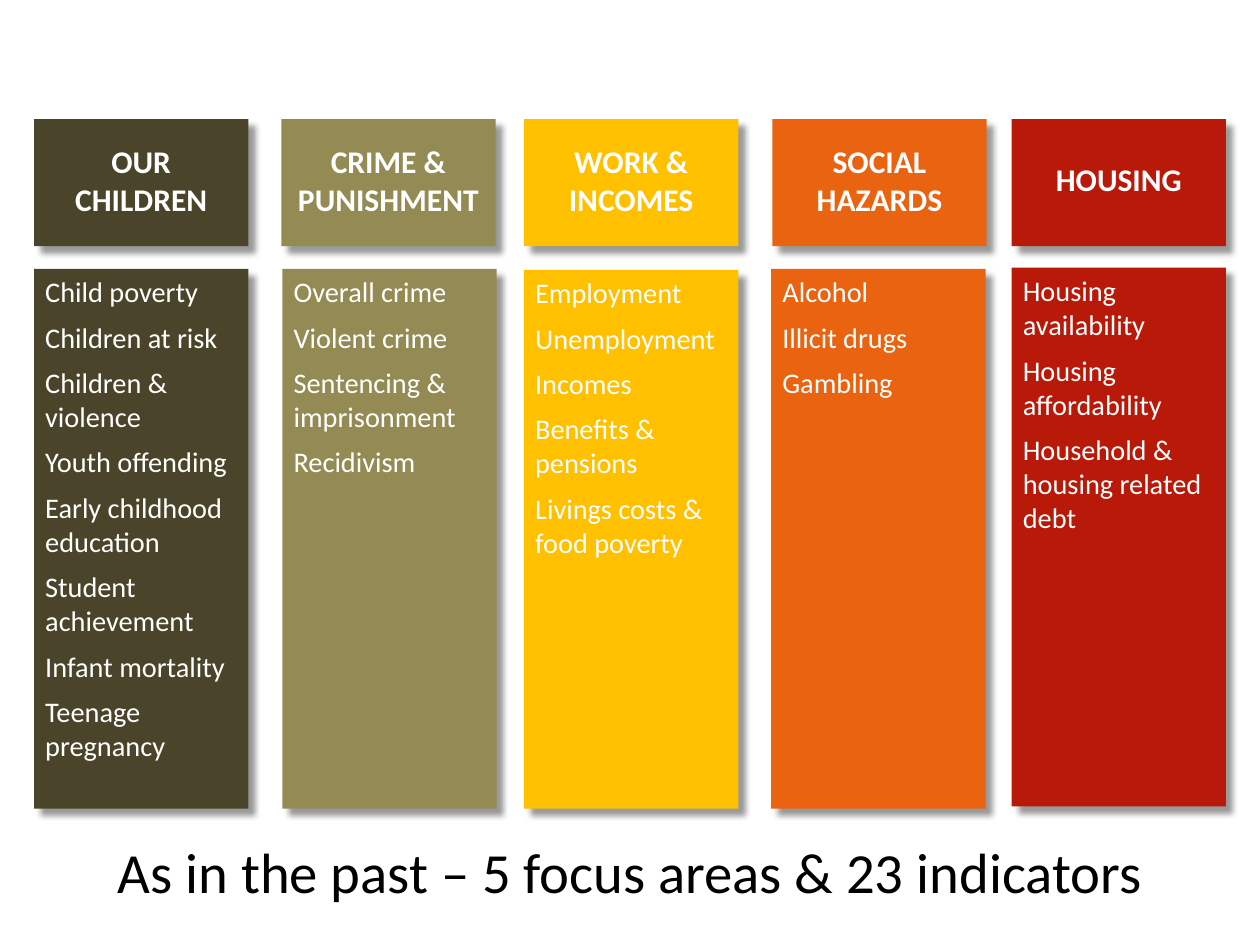
from lxml import etree
from pptx import Presentation
from pptx.dml.color import RGBColor
from pptx.enum.shapes import MSO_SHAPE
from pptx.enum.text import MSO_ANCHOR, PP_ALIGN
from pptx.oxml.ns import qn
from pptx.util import Pt

PX = 9144  # 100 px to the inch
RECT = MSO_SHAPE.RECTANGLE
TOP = MSO_ANCHOR.TOP
LEFT, CENTER = PP_ALIGN.LEFT, PP_ALIGN.CENTER

WHITE = RGBColor(0xFF, 0xFF, 0xFF)
BLACK = RGBColor(0x00, 0x00, 0x00)
BROWN = RGBColor(0x4A, 0x45, 0x2A)
OLIVE = RGBColor(0x94, 0x8A, 0x54)
GOLD = RGBColor(0xFF, 0xC0, 0x00)
ORANGE = RGBColor(0xE9, 0x63, 0x11)
RED = RGBColor(0xB8, 0x19, 0x08)

WIDE, HEAD_TOP, HEAD_TALL = 189, 105, 112

# colour, head left, head inset, head lines, list left, list top, list height, text height, title, items
AREAS = [
    (BROWN, 30, 15, 2, 30, 237, 476, 444, "OUR CHILDREN",
     ["Child poverty", "Children at risk", "Children & violence",
      "Youth offending", "Early childhood education",
      "Student achievement", "Infant mortality", "Teenage pregnancy"]),
    (OLIVE, 248, 0, 2, 249, 237, 476, 202, "CRIME & PUNISHMENT",
     ["Overall crime", "Violent crime", "Sentencing & imprisonment",
      "Recidivism"]),
    (GOLD, 462, 0, 2, 462, 238, 475, 263, "WORK & INCOMES",
     ["Employment", "Unemployment", "Incomes", "Benefits & pensions",
      "Livings costs & food poverty"]),
    (ORANGE, 681, 0, 2, 680, 237, 476, 131, "SOCIAL HAZARDS",
     ["Alcohol", "Illicit drugs", "Gambling"]),
    (RED, 892, 0, 1, 892, 236, 475, 252, "HOUSING",
     ["Housing availability", "Housing affordability",
      "Household & housing related debt"]),
]


def emu(box):
    return [n * PX for n in box]


def add_rect(slide, box, color):
    rect = slide.shapes.add_shape(RECT, *emu(box))
    rect.shadow.inherit = False
    rect.fill.solid()
    rect.fill.fore_color.rgb = color
    rect.line.fill.background()
    return rect


def add_shade(rect):
    """Cast a soft shadow down and to the right."""
    effects = rect.element.spPr.find(qn("a:effectLst"))
    outer = etree.SubElement(effects, qn("a:outerShdw"), blurRad=str(Pt(4)),
                             dist=str(Pt(6)), dir="2700000", algn="tl",
                             rotWithShape="0")
    black = etree.SubElement(outer, qn("a:srgbClr"), val="000000")
    etree.SubElement(black, qn("a:alpha"), val="40000")


def write(shape, lines, size=18, color=WHITE, bold=False, align=LEFT, gap=0):
    frame = shape.text_frame
    frame.word_wrap = True
    frame.vertical_anchor = TOP
    for i, line in enumerate(lines):
        para = frame.add_paragraph() if i else frame.paragraphs[0]
        para.alignment = align
        if i:
            para.space_before = Pt(gap)
        run = para.add_run()
        run.text = line
        font = run.font
        font.name, font.size, font.bold = "Calibri", Pt(size), bold
        font.color.rgb = color


def add_head(slide, box, color, title, rows, inset):
    left, top, width, height = box
    add_shade(add_rect(slide, box, color))
    drop, tall = (15, 77) if rows == 2 else (31, 44)
    label = slide.shapes.add_textbox(
        *emu((left + inset, top + drop, width - 2 * inset, tall)))
    write(label, [title], size=20, bold=True, align=CENTER)


def add_list(slide, box, color, items, tall):
    left, top, width, height = box
    add_shade(add_rect(slide, box, color))
    label = slide.shapes.add_textbox(*emu((left, top, width, tall)))
    write(label, items, gap=7.2)


def add_foot(slide, box):
    write(add_rect(slide, box, WHITE),
          ["As in the past – 5 focus areas & 23 indicators"],
          size=36, color=BLACK, align=CENTER)


def main():
    deck = Presentation()
    deck.slide_width, deck.slide_height = emu((1111, 834))
    slide = deck.slides.add_slide(deck.slide_layouts[6])
    for color, x, inset, rows, left, top, height, tall, title, items in AREAS:
        add_head(slide, (x, HEAD_TOP, WIDE, HEAD_TALL), color, title, rows,
                 inset)
        add_list(slide, (left, top, WIDE, height), color, items, tall)
    add_foot(slide, (0, 733, 1111, 101))
    deck.save("out.pptx")


if __name__ == "__main__":
    main()
